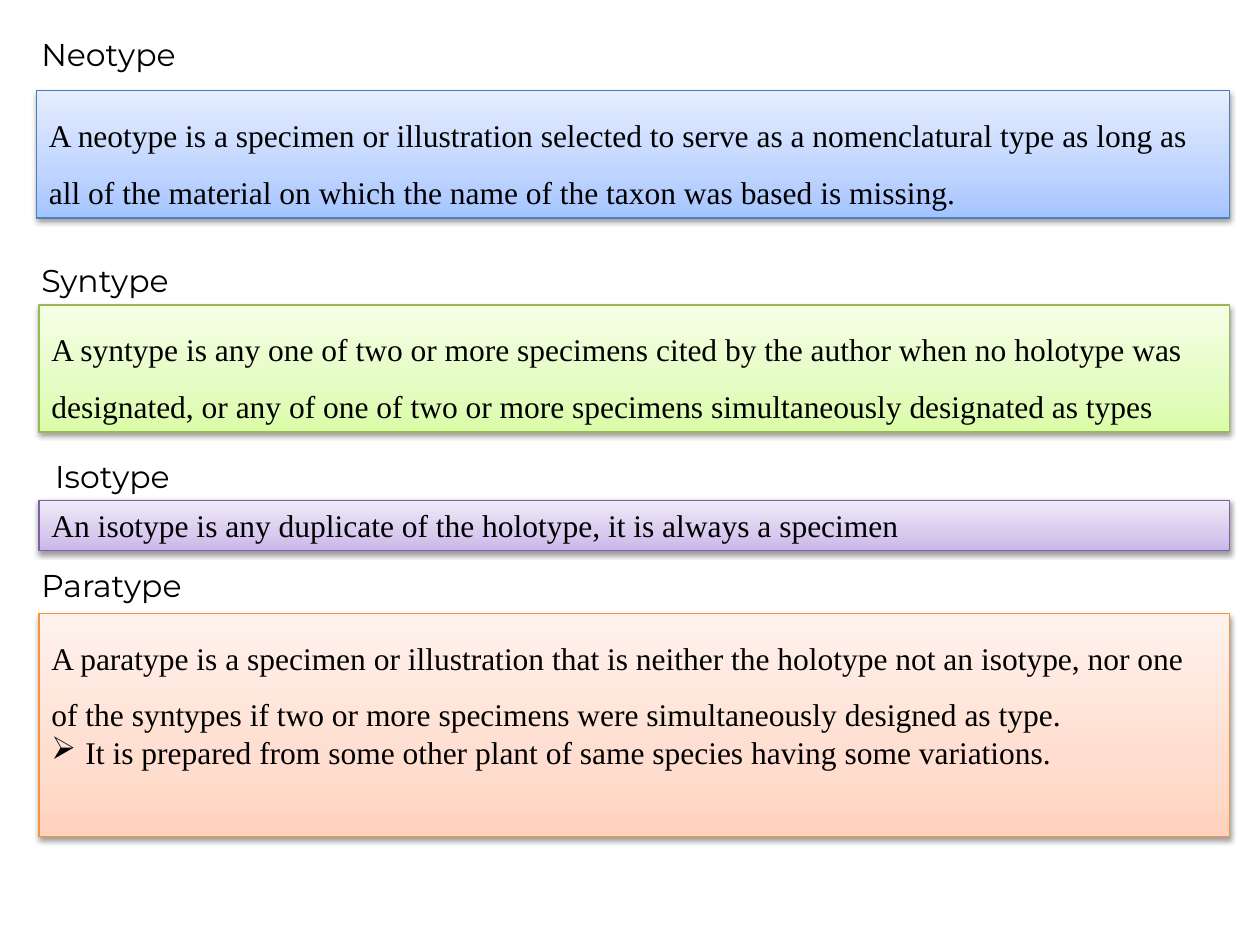
from copy import deepcopy
from dataclasses import dataclass

from lxml import etree
from pptx import Presentation
from pptx import util as u
from pptx.dml.color import RGBColor
from pptx.enum import shapes, text
from pptx.oxml import parse_xml
from pptx.oxml.ns import nsdecls, qn


@dataclass(frozen=True)
class Theme:
    heading_font: str = "Montserrat"
    body_font: str = "Times New Roman"
    size: int = 18
    ink: str = "000000"
    # Each palette: gradient from bottom to top, then outline
    blue: tuple = ("A4C4FF", "BFD4FF", "E6EEFF", "4B7EBC")
    green: tuple = ("DAFDA7", "E4FCC2", "F5FFE7", "98B955")
    purple: tuple = ("C9B5E8", "D8CBEE", "F0EAF9", "7D60A0")
    orange: tuple = ("FFD2BD", "FFDED0", "FFF2ED", "F69240")
    stops: tuple = (0, 0.35, 1)


class Builder:
    def __init__(self, page, theme):
        self.page = page
        self.theme = theme

    def add_wording(self, para, wording, font):
        para.alignment = text.PP_ALIGN.LEFT
        span = para.add_run()
        span.text = wording
        formats = {"name": font, "size": u.Pt(self.theme.size)}
        for name, value in formats.items():
            setattr(span.font, name, value)
        span.font.color.rgb = RGBColor.from_string(self.theme.ink)

    def set_frame(self, frame):
        formats = {
            "word_wrap": True,
            "auto_size": text.MSO_AUTO_SIZE.NONE,
            "vertical_anchor": text.MSO_ANCHOR.TOP,
        }
        for name, value in formats.items():
            setattr(frame, name, value)

    def heading(self, wording, left, top, width):
        box = self.page.shapes.add_textbox(
            u.Inches(left), u.Inches(top), u.Inches(width), u.Inches(0.4))
        self.set_frame(box.text_frame)
        self.add_wording(
            box.text_frame.paragraphs[0], wording, self.theme.heading_font)

    def panel(self, wording, left, top, height, palette, spacing, right=9.76):
        box = self.page.shapes.add_shape(
            shapes.MSO_SHAPE.RECTANGLE, u.Inches(left), u.Inches(top),
            u.Inches(right - left), u.Inches(height))
        self.shade(box, palette[:3])
        box.line.color.rgb = RGBColor.from_string(palette[3])
        box.line.width = u.Pt(0.75)
        self.shadow(box)
        self.set_frame(box.text_frame)
        para = box.text_frame.paragraphs[0]
        para.line_spacing = spacing
        self.add_wording(para, wording, self.theme.body_font)
        return box

    def shade(self, box, colors):
        box.fill.gradient()
        box.fill.gradient_angle = 90
        stop_list = box._element.spPr.find(".//" + qn("a:gsLst"))
        stop_list.append(deepcopy(stop_list[-1]))
        for stop, color, position in zip(
                box.fill.gradient_stops, colors, self.theme.stops):
            stop.color.rgb = RGBColor.from_string(color)
            stop.position = position

    def shadow(self, box):
        box.shadow.inherit = False
        effects = box._element.spPr.find(qn("a:effectLst"))
        effects.append(parse_xml(
            f'<a:outerShdw {nsdecls("a")} blurRad="{u.Pt(3.1)}" dist="{u.Pt(1.6)}" '
            f'dir="5400000" rotWithShape="0"><a:srgbClr val="{self.theme.ink}">'
            '<a:alpha val="38000"/></a:srgbClr></a:outerShdw>'))

    def bullet(self, box, wording):
        para = box.text_frame.add_paragraph()
        self.add_wording(para, wording, self.theme.body_font)
        props = para._p.get_or_add_pPr()
        indent = u.Inches(0.27)
        props.set("marL", str(indent))
        props.set("indent", str(-indent))
        etree.SubElement(props, qn("a:buChar")).set("char", "➢")


def main():
    deck = Presentation()
    deck.slide_width, deck.slide_height = u.Inches(10), u.Inches(7.5)
    theme = Theme()
    build = Builder(deck.slides.add_slide(deck.slide_layouts[6]), theme)

    # Headings
    for heading in (
        ("Neotype", 0.23, 0.23, 3.13),
        ("Syntype", 0.23, 2.02, 3.13),
        ("Isotype", 0.34, 3.58, 2),
        ("Paratype", 0.23, 4.44, 3.13),
    ):
        build.heading(*heading)

    # Definitions
    build.panel(
        "A neotype is a specimen or illustration selected to serve as a "
        "nomenclatural type as long as all of the material on which the name "
        "of the taxon was based is missing.",
        0.29, 0.72, 1.01, theme.blue, 1.5)
    build.panel(
        "A syntype is any one of two or more specimens cited by the author when "
        "no holotype was designated, or any of one of two or more specimens "
        "simultaneously designated as types",
        0.31, 2.42, 1.01, theme.green, 1.5)
    build.panel(
        "An isotype is any duplicate of the holotype, it is always a specimen",
        0.31, 3.97, 0.4, theme.purple, 1.0)
    paratype = build.panel(
        "A paratype is a specimen or illustration that is neither the holotype "
        "not an isotype, nor one of the syntypes if two or more specimens were "
        "simultaneously designed as type.",
        0.31, 4.87, 1.77, theme.orange, 1.5)
    build.bullet(
        paratype,
        "It is prepared from some other plant of same species having some variations.")

    deck.save("out.pptx")


if __name__ == "__main__":
    main()
